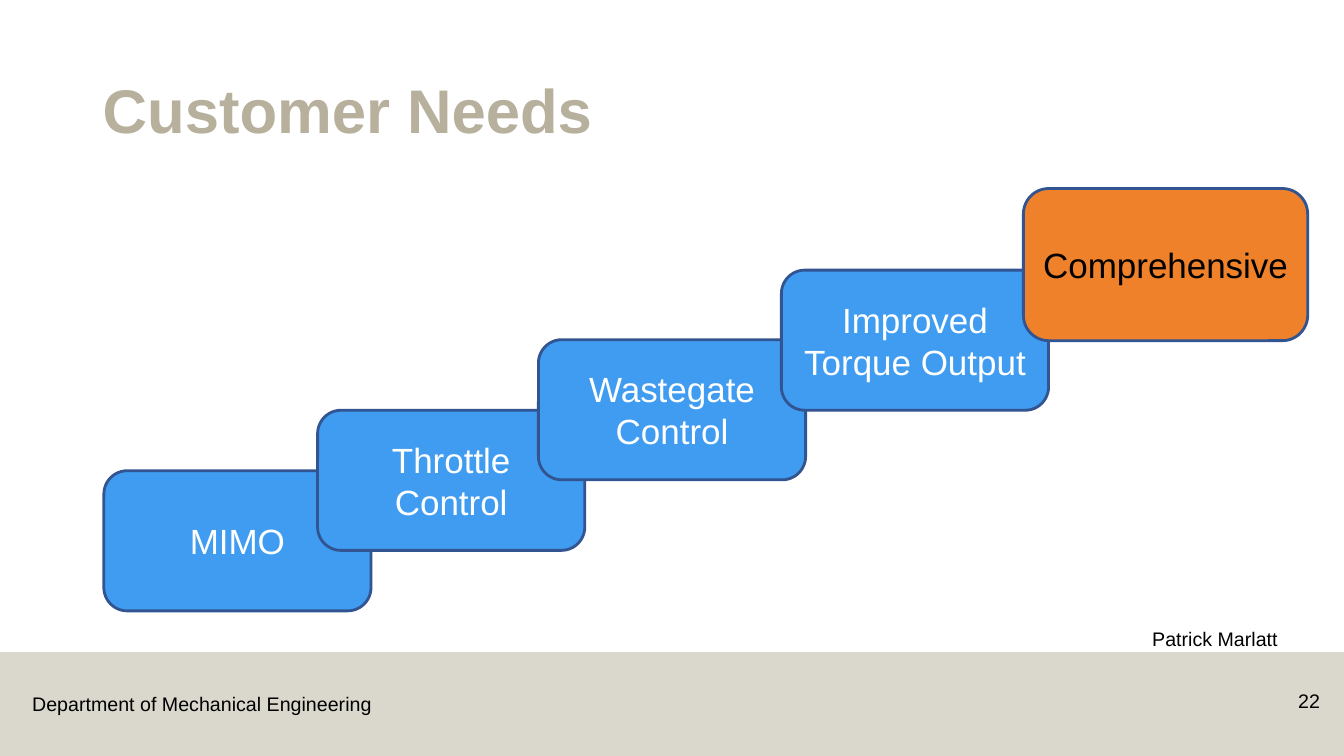
import dataclasses

import pptx
import pptx.dml.color
import pptx.enum.shapes
import pptx.enum.text
import pptx.oxml
import pptx.oxml.ns
import pptx.util
from pptx.util import Inches

ALIGN = pptx.enum.text.PP_ALIGN
ANCHOR = pptx.enum.text.MSO_ANCHOR
SHAPE = pptx.enum.shapes.MSO_SHAPE


@dataclasses.dataclass(frozen=True)
class Theme:
    """Colours, font and type sizes of the slide."""
    sand: str = "B7B09C"
    blue: str = "3F9CF0"
    orange: str = "EF812A"
    edge: str = "325491"
    white: str = "FFFFFF"
    black: str = "000000"
    font: str = "Arial"
    title: int = 44
    step: int = 25
    small: int = 14


THEME = Theme()


def color(code):
    """Return the colour for a hex code."""
    return pptx.dml.color.RGBColor.from_string(code)


def write(shape, text, size, ink, align=ALIGN.LEFT, anchor=ANCHOR.TOP, bold=False):
    """Put one styled run into a shape and return its paragraph."""
    frame = shape.text_frame
    frame.word_wrap = True
    frame.vertical_anchor = anchor
    para = frame.paragraphs[0]
    para.alignment = align
    run = para.add_run()
    run.text = text
    run.font.name = THEME.font
    run.font.size = pptx.util.Pt(size)
    run.font.bold = bold
    run.font.color.rgb = color(ink)
    return para


def add_text(slide, box, *words, **style):
    """Add a text box and return its paragraph."""
    label = slide.shapes.add_textbox(*map(Inches, box))
    return write(label, *words, **style)


def add_block(slide, kind, box, fill):
    """Add a filled shape without a shadow."""
    block = slide.shapes.add_shape(kind, *map(Inches, box))
    block.shadow.inherit = False
    block.fill.solid()
    block.fill.fore_color.rgb = color(fill)
    return block


def add_band(slide):
    """Add the half-transparent footer band."""
    band = add_block(slide, SHAPE.RECTANGLE, (0, 6.47, 13.33, 1.03), THEME.sand)
    band.line.fill.background()
    tint = band.fill._xPr.find(".//" + pptx.oxml.ns.qn("a:srgbClr"))
    tint.append(pptx.oxml.parse_xml(
        f'<a:alpha {pptx.oxml.ns.nsdecls("a")} val="50000"/>'))


def add_step(slide, text, box, fill, ink):
    """Add one rounded step of the staircase."""
    step = add_block(slide, SHAPE.ROUNDED_RECTANGLE, box, fill)
    step.line.color.rgb = color(THEME.edge)
    step.line.width = pptx.util.Pt(2)
    write(step, text, THEME.step, ink, ALIGN.CENTER, ANCHOR.MIDDLE)


def main():
    """Build and save the slide."""
    deck = pptx.Presentation()
    deck.slide_width, deck.slide_height = Inches(13.33), Inches(7.5)
    slide = deck.slides.add_slide(deck.slide_layouts[6])
    add_band(slide)
    small = (THEME.small, THEME.black)
    add_text(slide, (0.22, 6.82, 3.59, 0.34), "Department of Mechanical Engineering", *small)
    title = add_text(slide, (0.92, 0.4, 11.5, 1.45), "Customer Needs", THEME.title,
                     THEME.sand, anchor=ANCHOR.MIDDLE, bold=True)
    title.line_spacing = 0.9
    add_text(slide, (12.42, 6.79, 0.77, 0.4), "22", *small, align=ALIGN.RIGHT)
    steps = [
        ("MIMO", 1.03, 4.67),
        ("Throttle Control", 3.15, 4.07),
        ("Wastegate Control", 5.34, 3.37),
        ("Improved Torque Output", 7.75, 2.68),
    ]
    for text, left, top in steps:
        add_step(slide, text, (left, top, 2.65, 1.39), THEME.blue, THEME.white)
    add_step(slide, "Comprehensive", (10.15, 1.87, 2.82, 1.51), THEME.orange, THEME.black)
    add_text(slide, (11.33, 6.17, 2, 0.34), "Patrick Marlatt", *small)
    deck.save("out.pptx")


if __name__ == "__main__":
    main()
